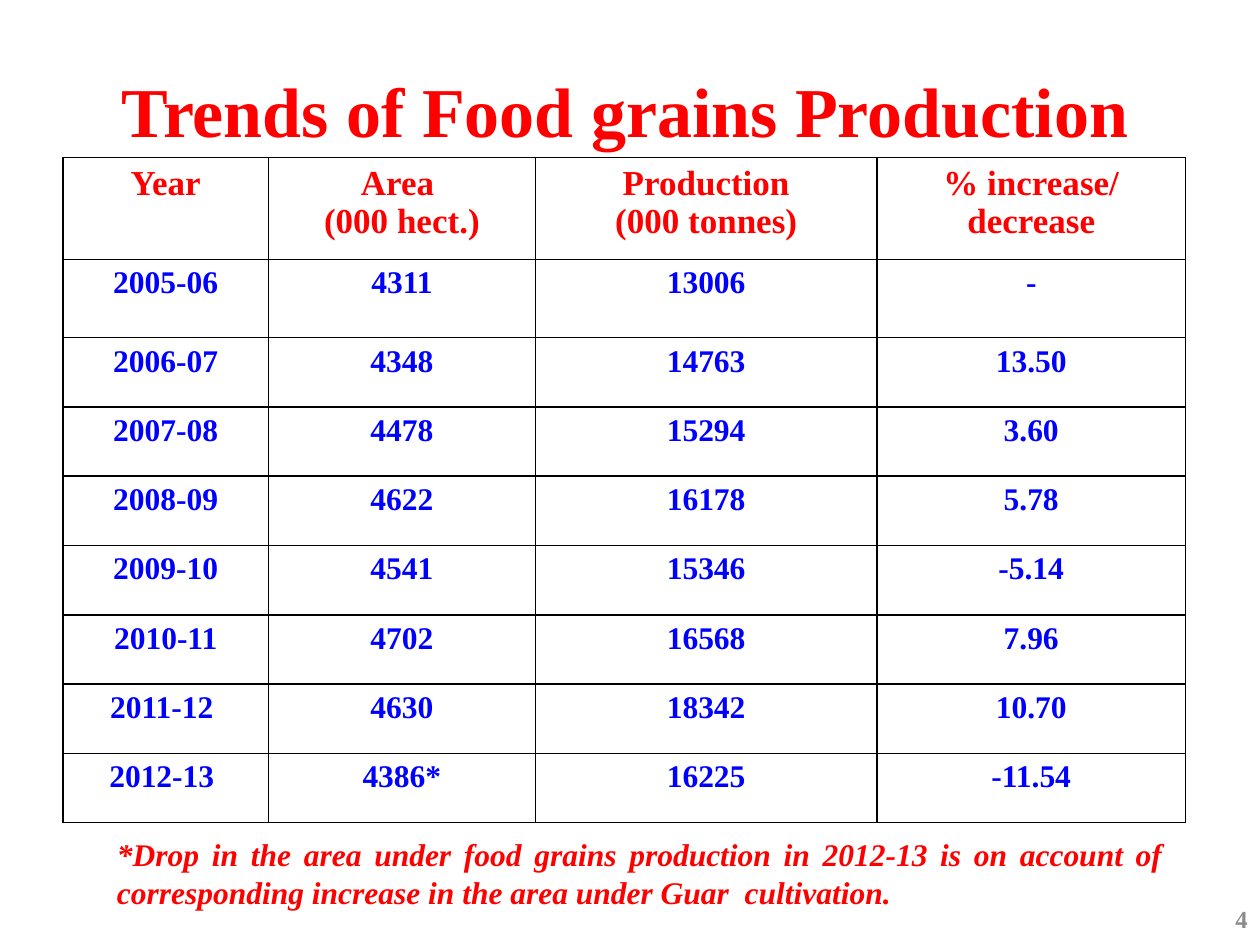
from lxml import etree
from pptx import Presentation
from pptx.dml.color import RGBColor
from pptx.enum.text import MSO_ANCHOR, PP_ALIGN
from pptx.oxml.ns import qn
from pptx.util import Inches, Pt

RED = RGBColor(0xFF, 0x00, 0x00)
BLUE = RGBColor(0x00, 0x00, 0xFF)
GRAY = RGBColor(0x8C, 0x8C, 0x8C)
WHITE = RGBColor(0xFF, 0xFF, 0xFF)
BLACK = RGBColor(0x00, 0x00, 0x00)
LEFT, CENTER, RIGHT, JUSTIFY = PP_ALIGN.LEFT, PP_ALIGN.CENTER, PP_ALIGN.RIGHT, PP_ALIGN.JUSTIFY
TOP, MIDDLE, BOTTOM = MSO_ANCHOR.TOP, MSO_ANCHOR.MIDDLE, MSO_ANCHOR.BOTTOM
TITLE_ONLY = 5

HEADERS = ["Year", "Area \n(000 hect.)", "Production\n(000 tonnes)", "% increase/ decrease"]
ROWS = [
    ["2005-06", "4311", "13006", "-"],
    ["2006-07", "4348", "14763", "13.50"],
    ["2007-08", "4478", "15294", "3.60"],
    ["2008-09", "4622", "16178", "5.78"],
    ["2009-10", "4541", "15346", "-5.14"],
    ["2010-11", "4702", "16568", "7.96"],
    ["2011-12 ", "4630", "18342", "10.70"],
    ["2012-13 ", "4386*", "16225", "-11.54"],
]
COL_WIDTHS = [1.63, 2.12, 2.71, 2.45]
ROW_HEIGHTS = [0.81, 0.62] + [0.55] * 7
FOOTNOTE = ("*Drop in the area under food grains production in 2012-13 is on account of "
            "corresponding increase in the area under Guar  cultivation.")


def write(tf, text, size=18, color=BLUE, align=CENTER, italic=False, font="Times New Roman"):
    """Fill a text frame in bold, one paragraph per line of text."""
    tf.word_wrap = True
    for i, line in enumerate(text.split("\n")):
        p = tf.paragraphs[0] if i == 0 else tf.add_paragraph()
        p.alignment = align
        r = p.add_run()
        r.text = line
        r.font.name = font
        r.font.size = Pt(size)
        r.font.bold = True
        r.font.italic = italic
        r.font.color.rgb = color


def set_borders(cell, color=BLACK, width=1):
    tcPr = cell._tc.get_or_add_tcPr()
    for i, side in enumerate(("a:lnL", "a:lnR", "a:lnT", "a:lnB")):
        ln = etree.Element(qn(side), w=str(Pt(width)))
        fill = etree.SubElement(ln, qn("a:solidFill"))
        etree.SubElement(fill, qn("a:srgbClr"), val=str(color))
        tcPr.insert(i, ln)  # borders come before the fill


class SlideBuilder:
    def __init__(self, prs):
        self.s = prs.slides.add_slide(prs.slide_layouts[TITLE_ONLY])

    def title(self, text, x, y, w, h):
        sp = self.s.shapes.title
        sp.left, sp.top, sp.width, sp.height = map(Inches, (x, y, w, h))
        sp.text_frame.vertical_anchor = BOTTOM
        write(sp.text_frame, text, size=40, color=RED)

    def text(self, text, x, y, w, h, anchor=TOP, **fmt):
        sp = self.s.shapes.add_textbox(*map(Inches, (x, y, w, h)))
        sp.text_frame.vertical_anchor = anchor
        write(sp.text_frame, text, **fmt)

    def table(self, headers, rows, x, y, col_widths, row_heights):
        size = map(Inches, (x, y, sum(col_widths), sum(row_heights)))
        table = self.s.shapes.add_table(len(row_heights), len(col_widths), *size).table
        table.first_row = table.horz_banding = False
        for col, w in zip(table.columns, col_widths):
            col.width = Inches(w)
        for row, h in zip(table.rows, row_heights):
            row.height = Inches(h)
        for i, values in enumerate([headers] + rows):
            fmt = {"size": 20, "color": RED} if i == 0 else {}
            for j, value in enumerate(values):
                cell = table.cell(i, j)
                if i == 0:
                    cell.fill.solid()
                    cell.fill.fore_color.rgb = WHITE
                else:
                    cell.fill.background()
                set_borders(cell)
                write(cell.text_frame, value, **fmt)


def main():
    prs = Presentation()
    prs.slide_width, prs.slide_height = Inches(10), Inches(7.5)
    slide = SlideBuilder(prs)
    slide.text("4", 9.33, 7.08, 0.67, 0.42, anchor=MIDDLE, size=14, color=GRAY, align=RIGHT)
    slide.title("Trends of Food grains Production", 0.67, 0.17, 8.58, 1.08)
    slide.table(HEADERS, ROWS, 0.5, 1.25, COL_WIDTHS, ROW_HEIGHTS)
    slide.text(FOOTNOTE, 0.83, 6.58, 8.5, 0.71, color=RED, align=JUSTIFY, italic=True)
    prs.save("out.pptx")


if __name__ == "__main__":
    main()
